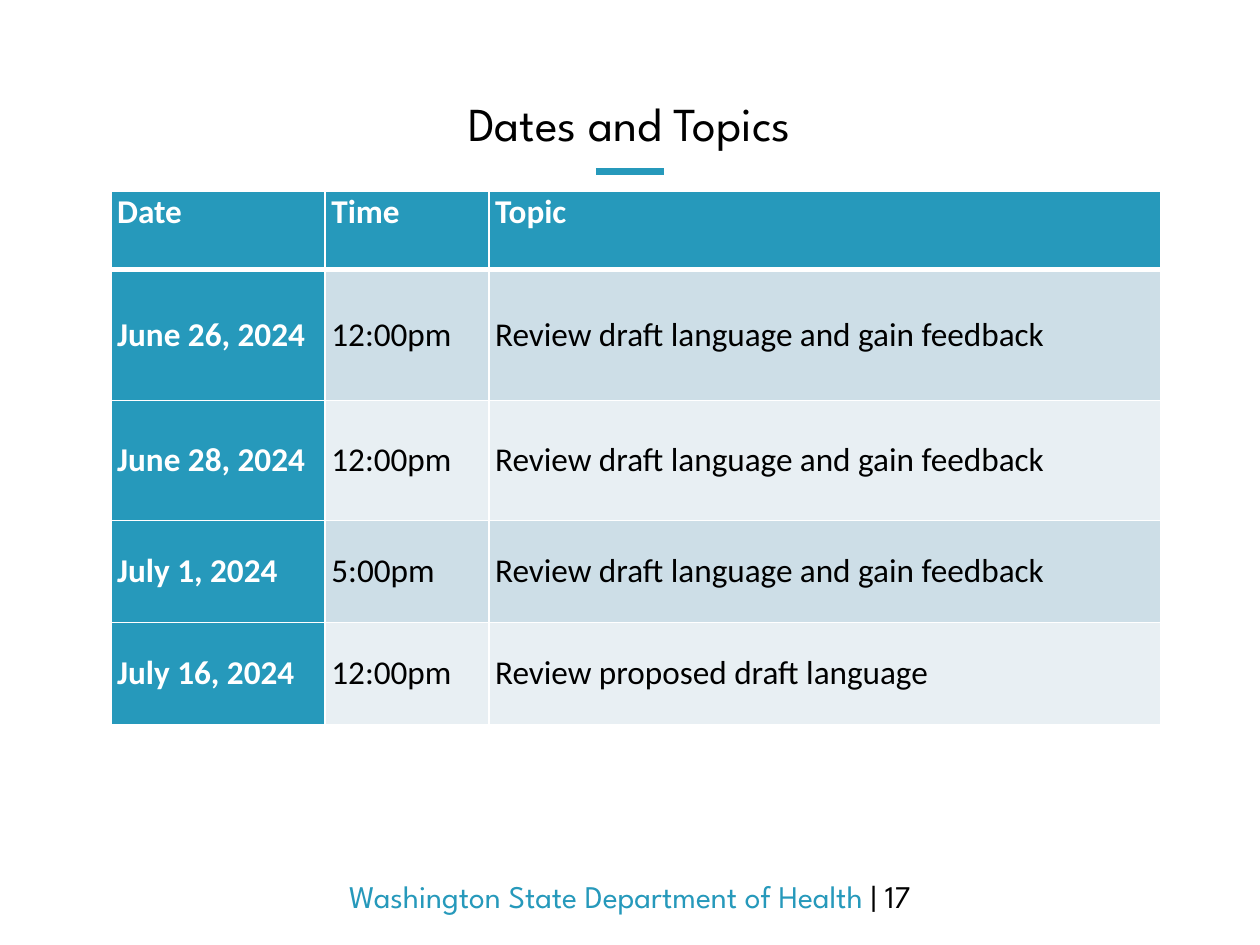
from lxml import etree
from pptx import Presentation
from pptx.dml.color import RGBColor
from pptx.enum.shapes import MSO_CONNECTOR
from pptx.enum.text import MSO_ANCHOR, MSO_AUTO_SIZE, PP_ALIGN
from pptx.oxml.ns import qn
from pptx.util import Pt

PX = 9144  # EMU per px, 100 px to the inch
CENTER = PP_ALIGN.CENTER
TOP, MIDDLE = MSO_ANCHOR.TOP, MSO_ANCHOR.MIDDLE
STRAIGHT = MSO_CONNECTOR.STRAIGHT
FIT_SHAPE = MSO_AUTO_SIZE.SHAPE_TO_FIT_TEXT

TEAL, WHITE, BLACK = "2699BB", "FFFFFF", "000000"
BANDS = ("CDDEE7", "E8EFF3")
HEAD_FONT, BODY_FONT = "League Spartan", "Calibri"

COLS = (170, 130, 533)
ROWS = (62, 104, 95, 81, 81)
FEEDBACK = "Review draft language and gain feedback"
MEETINGS = (
    ("Date", "Time", "Topic"),
    ("June 26, 2024", "12:00pm", FEEDBACK),
    ("June 28, 2024", "12:00pm", FEEDBACK),
    ("July 1, 2024", "5:00pm", FEEDBACK),
    ("July 16, 2024", "12:00pm", "Review proposed draft language"),
)


def px(*values):
    return [v * PX for v in values]


def rgb(color):
    return RGBColor.from_string(color)


def add_run(p, text, font, size, color, bold=False):
    r = p.add_run()
    r.text = text
    r.font.name, r.font.size, r.font.bold = font, Pt(size), bold
    r.font.color.rgb = rgb(color)


def add_title(s, x, y, w, h):
    sp = s.shapes.title
    sp.left, sp.top, sp.width, sp.height = px(x, y, w, h)
    tf = sp.text_frame
    tf.vertical_anchor = MIDDLE
    p = tf.paragraphs[0]
    p.alignment, p.line_spacing = CENTER, 0.9
    add_run(p, "Dates and Topics", HEAD_FONT, 27, BLACK)


def add_accent(s, x, y, w):
    line = s.shapes.add_connector(STRAIGHT, *px(x, y, x + w, y))
    line.line.color.rgb = rgb(TEAL)
    line.line.width = Pt(4)
    etree.SubElement(line._element.spPr, qn("a:effectLst"))


def add_footer(s, x, y, w, h):
    tf = s.shapes.add_textbox(*px(x, y, w, h)).text_frame
    tf.word_wrap = True
    tf.auto_size = FIT_SHAPE
    p = tf.paragraphs[0]
    p.alignment = CENTER
    add_run(p, "Washington State Department of Health ", HEAD_FONT, 18, TEAL)
    add_run(p, "| 17", HEAD_FONT, 18, BLACK)


def set_borders(cell, bottom):
    tcPr = cell._tc.get_or_add_tcPr()
    for side, width in (("L", 1), ("R", 1), ("T", 1), ("B", bottom)):
        ln = etree.SubElement(tcPr, qn(f"a:ln{side}"), w=str(Pt(width)))
        fill = etree.SubElement(ln, qn("a:solidFill"))
        etree.SubElement(fill, qn("a:srgbClr"), val=WHITE)


def fill_cell(cell, text, row, col):
    strong = row == 0 or col == 0
    # Borders go before the fill, as the schema orders them
    set_borders(cell, 3 if row == 0 else 1)
    cell.fill.solid()
    cell.fill.fore_color.rgb = rgb(TEAL if strong else BANDS[(row - 1) % 2])
    cell.margin_left, cell.margin_right = px(5, 5)
    cell.margin_top = cell.margin_bottom = 0
    cell.vertical_anchor = MIDDLE if row else TOP
    add_run(cell.text_frame.paragraphs[0], text, BODY_FONT, 19,
            WHITE if strong else BLACK, strong)


def add_meetings(s, x, y):
    table = s.shapes.add_table(len(ROWS), len(COLS),
                               *px(x, y, sum(COLS), sum(ROWS))).table
    for column, w in zip(table.columns, px(*COLS)):
        column.width = w
    for row, h in zip(table.rows, px(*ROWS)):
        row.height = h
    for i, meeting in enumerate(MEETINGS):
        for j, text in enumerate(meeting):
            fill_cell(table.cell(i, j), text, i, j)


def main():
    prs = Presentation()
    prs.slide_width, prs.slide_height = px(1000, 750)
    s = prs.slides.add_slide(prs.slide_layouts[5])  # Title Only
    add_accent(s, 473, 136, 54)
    add_footer(s, 0, 691, 1000, 40)
    add_title(s, 0, 74, 999, 53)
    add_meetings(s, 88, 152)
    prs.save("out.pptx")


if __name__ == "__main__":
    main()
